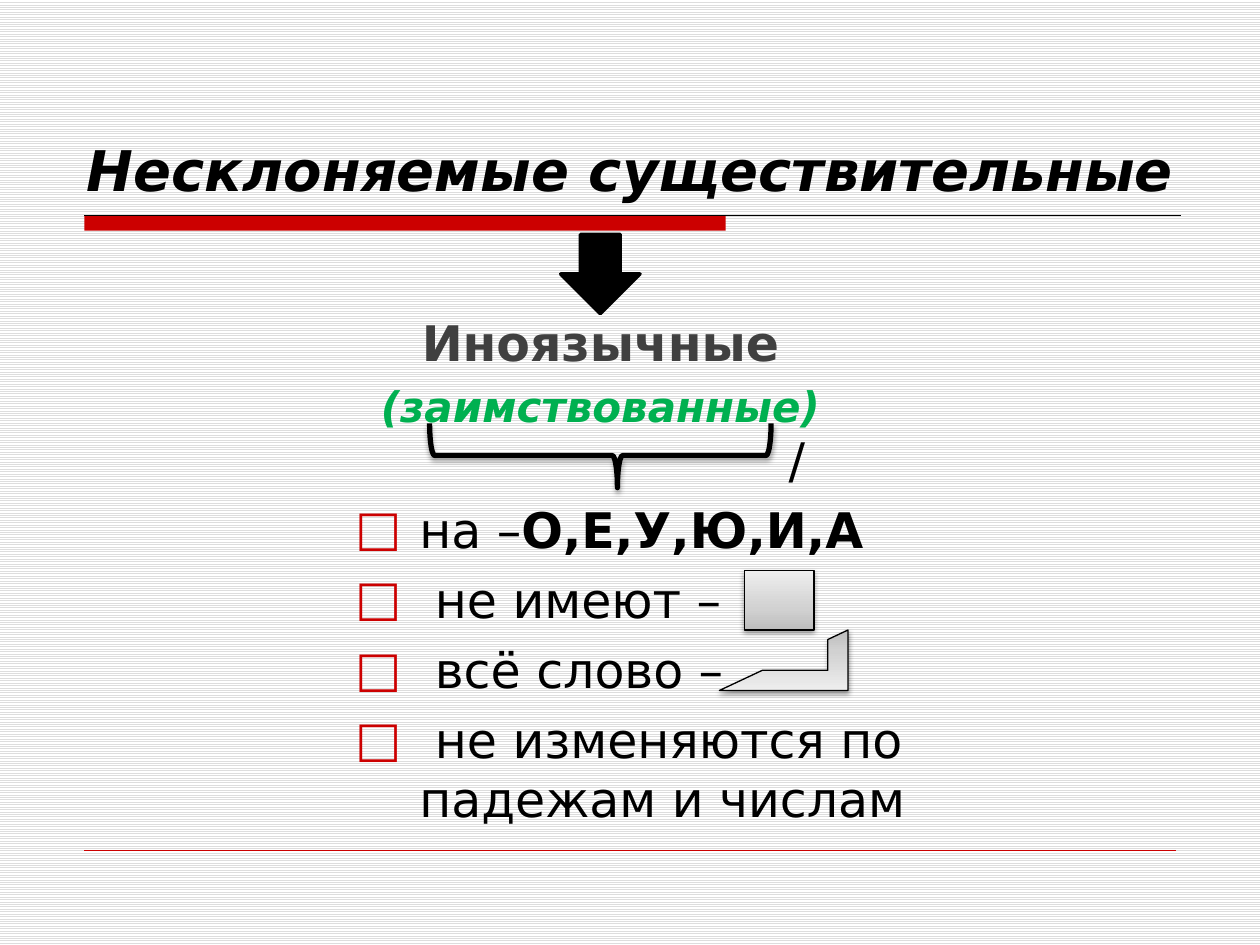
from lxml.etree import SubElement
from pptx import Presentation
from pptx.dml.color import RGBColor
from pptx.enum.dml import MSO_PATTERN
from pptx.enum.shapes import MSO_CONNECTOR, MSO_SHAPE
from pptx.enum.text import MSO_ANCHOR, PP_ALIGN
from pptx.oxml.ns import qn
from pptx.util import Inches, Pt

FONT = "DejaVu Sans"
RED, BLACK = "CC0000", "000000"
GREY_STOPS = [(0, "BDBDBD"), (35, "D1D1D1"), (100, "EEEEEE")]
HANGING = 0.51
SLASH_INDENT = 3.44

TITLE = [[("Несклоняемые существительные", dict(size=32, bold=True, italic=True))]]
ORIGIN = [
    [("Иноязычные", dict(size=28, bold=True, color="404040"))],
    [("(заимствованные)", dict(size=24, bold=True, italic=True, color="00B050"))],
]
STRESS_MARK = [("/", {})]
RULES = [
    [("на –", {}), ("О,Е,У,Ю,И,А", dict(bold=True))],
    [(" не имеют –", {})],
    [(" всё слово –", {})],
    [(" не изменяются по падежам и числам", {})],
]
# preset, (left, top, width, height), fill, line width, rotation, adjustments, shadow opacity
SHAPES = [
    (MSO_SHAPE.RECTANGLE, (5.91, 4.53, 0.55, 0.47), GREY_STOPS, 0.75, 0, (), 38),
    (MSO_SHAPE.HALF_FRAME, (5.71, 5, 1.02, 0.48), GREY_STOPS, 0.75, 180, (), 38),
    (MSO_SHAPE.DOWN_ARROW, (4.45, 1.86, 0.63, 0.63), BLACK, 2, 0, (), 0),
    (MSO_SHAPE.LEFT_BRACE, (4.51, 2.26, 0.51, 2.71), None, 3, 270, (0.08, 0.55), 35),
]


def rgb(value):
    return RGBColor.from_string(value)


def add_xml(parent, tag, **attributes):
    return SubElement(parent, qn(tag), {key: str(value) for key, value in attributes.items()})


def add_line(page, start, end, color, width):
    line = page.shapes.add_connector(
        MSO_CONNECTOR.STRAIGHT, *(Inches(value) for value in (*start, *end)))
    line.line.color.rgb = rgb(color)
    line.line.width = Pt(width)
    add_xml(line._element.spPr, "a:effectLst")


def add_text(page, area, paragraphs, align, anchor=MSO_ANCHOR.TOP, spacing=0.0):
    """Spacing is the space before a paragraph as a share of its text size."""
    box = page.shapes.add_textbox(*map(Inches, area))
    frame = box.text_frame
    frame.word_wrap = True
    frame.vertical_anchor = anchor
    for index, spans in enumerate(paragraphs):
        para = frame.paragraphs[0] if index == 0 else frame.add_paragraph()
        para.alignment = align
        para.space_before = Pt(spacing * spans[0][1].get("size", 28))
        for text, look in spans:
            span = para.add_run()
            span.text = text
            values = dict(name=FONT, size=28, bold=False, italic=False, color=BLACK) | look
            span.font.color.rgb = rgb(values.pop("color"))
            values["size"] = Pt(values["size"])
            for name, value in values.items():
                setattr(span.font, name, value)
    return frame.paragraphs


def set_bullet(para):
    props = para._p.get_or_add_pPr()
    props.set("marL", str(Inches(HANGING)))
    props.set("indent", str(-Inches(HANGING)))
    add_xml(add_xml(props, "a:buClr"), "a:srgbClr", val=RED)
    add_xml(props, "a:buFont", typeface=FONT)
    add_xml(props, "a:buChar", char="□")


def set_gradient(shape, stops):
    """Run the colour stops from the bottom edge to the top edge."""
    shape.fill.gradient()
    shape.fill.gradient_angle = 90
    stop_list = shape._element.spPr.find(qn("a:gradFill")).find(qn("a:gsLst"))
    stop_list.clear()
    for percent, color in stops:
        add_xml(add_xml(stop_list, "a:gs", pos=percent * 1000), "a:srgbClr", val=color)


def add_shape(page, preset, area, fill, line_width=0, rotation=0, adjustments=(), opacity=0):
    shape = page.shapes.add_shape(preset, *map(Inches, area))
    shape.rotation = rotation
    for index, value in enumerate(adjustments):
        shape.adjustments[index] = value
    if fill is None:
        shape.fill.background()
    elif isinstance(fill, str):
        shape.fill.solid()
        shape.fill.fore_color.rgb = rgb(fill)
    else:
        set_gradient(shape, fill)
    if line_width:
        shape.line.color.rgb = rgb(BLACK)
        shape.line.width = Pt(line_width)
    else:
        shape.line.fill.background()
    shape.shadow.inherit = False
    if opacity:
        effects = shape._element.spPr.find(qn("a:effectLst"))
        shadow = add_xml(effects, "a:outerShdw", blurRad=Pt(3.1), dist=Pt(1.7),
                         dir=90 * 60000, rotWithShape=0)
        color = add_xml(shadow, "a:srgbClr", val=BLACK)
        add_xml(color, "a:alpha", val=opacity * 1000)


def main():
    deck = Presentation()
    deck.slide_width, deck.slide_height = Inches(10), Inches(7.5)
    page = deck.slides.add_slide(deck.slide_layouts[6])
    backdrop = page.background.fill
    backdrop.patterned()
    backdrop.pattern = MSO_PATTERN.LIGHT_HORIZONTAL
    backdrop.fore_color.rgb = rgb("DDDDDD")
    backdrop.back_color.rgb = rgb("FFFFFF")

    add_shape(page, MSO_SHAPE.RECTANGLE, (0.67, 1.71, 5.09, 0.12), RED)
    add_line(page, (0.67, 1.71), (9.37, 1.71), BLACK, 0.75)
    add_line(page, (0.67, 6.75), (9.33, 6.75), RED, 0.25)

    add_text(page, (0.2, 0.33, 9.61, 1.33), TITLE, PP_ALIGN.CENTER, MSO_ANCHOR.BOTTOM)
    add_text(page, (2.62, 2.43, 4.29, 4.67), ORIGIN, PP_ALIGN.CENTER, spacing=0.23)
    stress, *rules = add_text(page, (2.72, 3.36, 5.28, 4.67), [STRESS_MARK, *RULES],
                              PP_ALIGN.LEFT, spacing=0.23)
    stress._p.get_or_add_pPr().set("marL", str(Inches(SLASH_INDENT)))
    for para in rules:
        set_bullet(para)
    for shape in SHAPES:
        add_shape(page, *shape)
    deck.save("out.pptx")


if __name__ == "__main__":
    main()
